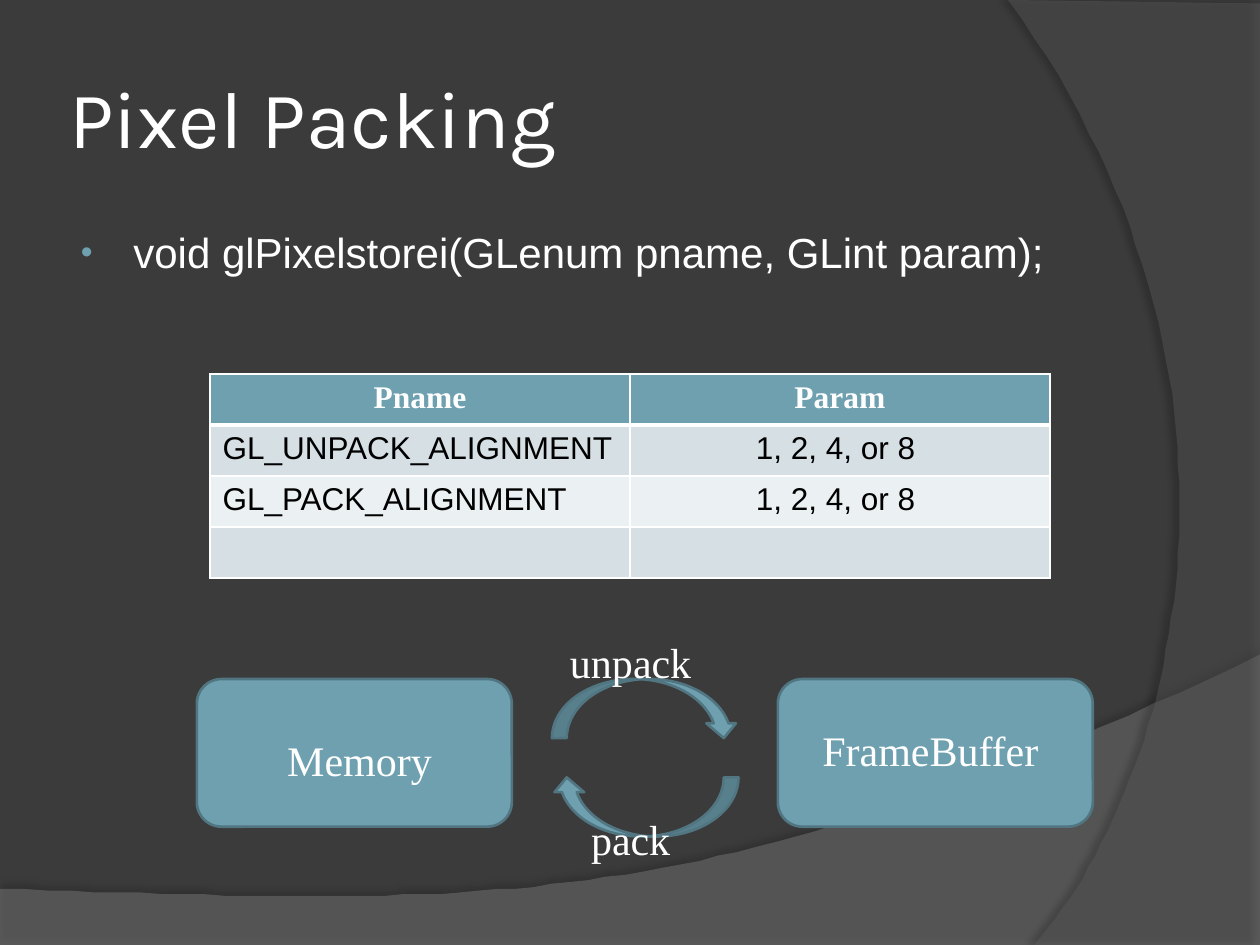
from lxml.etree import SubElement
from pptx import Presentation
from pptx.dml.color import RGBColor
from pptx.enum.shapes import MSO_SHAPE as Shape
from pptx.enum.text import MSO_ANCHOR as Anchor, MSO_AUTO_SIZE as AutoSize, PP_ALIGN as Align
from pptx.oxml.ns import qn
from pptx.util import Pt

TEAL, DARK_TEAL, WHITE, BLACK = "6EA0B0", "517682", "FFFFFF", "000000"
SERIF, SANS = "Times New Roman", "Arial"
ROWS = [
    ("Pname", "Param"),
    ("GL_UNPACK_ALIGNMENT", "1, 2, 4, or 8 "),
    ("GL_PACK_ALIGNMENT", "1, 2, 4, or 8 "),
    ("", ""),
]


def color(value):
    """Turn a hex string into a colour."""
    return RGBColor.from_string(value)


def add_element(parent, tag, **attributes):
    """Append an XML child with the given attributes."""
    return SubElement(parent, qn(tag), {key: str(value) for key, value in attributes.items()})


def place(shape, left, top, width, height):
    """Set the position and size of a shape in points."""
    shape.left, shape.top, shape.width, shape.height = map(Pt, (left, top, width, height))


def style_text(paragraph, text, size, name, align=Align.CENTER, hex_color=WHITE, bold=False):
    """Fill a paragraph and set its font and alignment."""
    paragraph.text = text
    paragraph.alignment = align
    font = paragraph.font
    font.size, font.name, font.bold = Pt(size), name, bold
    font.color.rgb = color(hex_color)


def curve(start, control_1, control_2, end, steps=60):
    """Return points along a cubic curve."""
    return [
        tuple(
            (1 - t) ** 3 * a + 3 * (1 - t) ** 2 * t * b + 3 * (1 - t) * t ** 2 * c + t ** 3 * d
            for a, b, c, d in zip(start, control_1, control_2, end)
        )
        for t in (step / steps for step in range(steps + 1))
    ]


def add_swoosh(slide, points, fill, opacity, shadow_opacity, distance, direction):
    """Draw a translucent backdrop with a soft shadow behind everything else."""
    builder = slide.shapes.build_freeform(*points[0], scale=Pt(1))
    builder.add_line_segments(points[1:], close=True)
    shape = builder.convert_to_shape()
    shape.line.fill.background()
    shape.fill.solid()
    shape.fill.fore_color.rgb = color(fill)
    properties = shape._element.spPr
    add_element(properties.find(".//" + qn("a:srgbClr")), "a:alpha", val=opacity * 1000)
    effects = add_element(properties, "a:effectLst")
    shadow = add_element(effects, "a:outerShdw", blurRad=Pt(4), dist=Pt(distance),
                         dir=direction * 60000, algn="ctr", rotWithShape=0)
    shadow_color = add_element(shadow, "a:srgbClr", val=BLACK)
    add_element(shadow_color, "a:alpha", val=shadow_opacity * 1000)
    shape._element.getparent().insert(2, shape._element)


def add_backdrop(slide):
    """Add the right and bottom swooshes of the theme."""
    right = [(720, 1.5), (720, 540), (591, 540)]
    right += curve((591, 540), (673.2, 445.7), (733, 216), (576, 0))[1:]
    bottom = [(0, 507.6), (0, 540), (720, 540)]
    bottom += curve((720, 374.4), (402.5, 524.9), (281.5, 517.7), (0, 507.6))
    add_swoosh(slide, right, "5E5E5E", 40, 45, 4, 180)
    add_swoosh(slide, bottom, "7F7F7F", 45, 35, 3.5, 270)


def fill_title(slide, text):
    """Place and fill the title."""
    title = slide.shapes.title
    place(title, 36, 21.6, 588, 90)
    frame = title.text_frame
    frame.auto_size, frame.vertical_anchor = AutoSize.NONE, Anchor.MIDDLE
    frame.margin_left = frame.margin_right = Pt(3.6)
    style_text(frame.paragraphs[0], text, 46, "Karla", Align.LEFT)


def fill_body(slide, text):
    """Place the body and fill its bulleted line."""
    body = slide.placeholders[1]
    place(body, 36, 126, 588, 356.4)
    body.text_frame.auto_size = AutoSize.NONE
    paragraph = body.text_frame.paragraphs[0]
    style_text(paragraph, text, 24, SANS, Align.LEFT)
    properties = paragraph._p.get_or_add_pPr()
    properties.set("marL", str(Pt(33)))
    properties.set("indent", str(Pt(-30)))
    paragraph.space_before = Pt(4.8)
    font = properties.find(qn("a:defRPr"))
    bullet_color = add_element(properties, "a:buClr")
    add_element(bullet_color, "a:srgbClr", val=TEAL)
    add_element(properties, "a:buSzPct", val=80000)
    add_element(properties, "a:buFont", typeface=SANS)
    add_element(properties, "a:buChar", char="•")
    properties.append(font)


def add_block(slide, kind, left, top, width, height, rotation=0):
    """Add a teal preset shape with a darker outline."""
    shape = slide.shapes.add_shape(kind, *map(Pt, (left, top, width, height)))
    shape.rotation = rotation
    shape.shadow.inherit = False
    shape.fill.solid()
    shape.fill.fore_color.rgb = color(TEAL)
    shape.line.color.rgb = color(DARK_TEAL)
    shape.line.width = Pt(1.5)


def add_label(slide, text, left, top, width):
    """Add a centred label."""
    box = slide.shapes.add_textbox(*map(Pt, (left, top, width, 36.7)))
    box.text_frame.word_wrap = True
    style_text(box.text_frame.paragraphs[0], text, 24, SERIF)


def set_borders(cell, header, below_header):
    """Draw white cell borders, thicker under the header."""
    widths = {"L": 1, "R": 1, "T": 3 if below_header else 1, "B": 3 if header else 1}
    properties = cell._tc.get_or_add_tcPr()
    for side, width in widths.items():
        line = add_element(properties, "a:ln" + side, w=Pt(width))
        add_element(add_element(line, "a:solidFill"), "a:srgbClr", val=WHITE)


def add_parameter_table(slide):
    """Add the table of packing parameters."""
    frame = slide.shapes.add_table(len(ROWS), 2, Pt(120), Pt(213.6), Pt(480), Pt(116.8))
    table = frame.table
    for row_index, texts in enumerate(ROWS):
        header = row_index == 0
        fill = TEAL if header else ("EBF0F2", "D5DFE4")[row_index % 2]
        for column_index, text in enumerate(texts):
            cell = table.cell(row_index, column_index)
            set_borders(cell, header, row_index == 1)
            cell.fill.solid()
            cell.fill.fore_color.rgb = color(fill)
            align = Align.CENTER if header or column_index else Align.LEFT
            style_text(cell.text_frame.paragraphs[0], text, 18, SERIF if header else SANS,
                       align, WHITE if header else BLACK, header)


def add_diagram(slide):
    """Add the two stores and the arrows between them."""
    for left in (112.5, 444.5):
        add_block(slide, Shape.ROUNDED_RECTANGLE, left, 388, 180, 84.4)
    add_label(slide, "FrameBuffer", 450, 410.4, 163.4)
    add_label(slide, "Memory", 123.8, 416.2, 163.4)
    for top, rotation in ((388, 0), (444.2, 180)):
        add_block(slide, Shape.CURVED_DOWN_ARROW, 315.4, top, 106.6, 33.8, rotation)


def main():
    """Build and save the slide."""
    presentation = Presentation()
    presentation.slide_width, presentation.slide_height = Pt(720), Pt(540)
    slide = presentation.slides.add_slide(presentation.slide_layouts[1])
    slide.background.fill.solid()
    slide.background.fill.fore_color.rgb = color("3B3B3B")
    add_backdrop(slide)
    fill_title(slide, "Pixel Packing")
    fill_body(slide, "void glPixelstorei(GLenum pname, GLint param);")
    add_diagram(slide)
    add_parameter_table(slide)
    add_label(slide, "unpack", 309.6, 360, 101.5)
    add_label(slide, "pack", 309.6, 461.5, 101.5)
    presentation.save("out.pptx")


if __name__ == "__main__":
    main()
